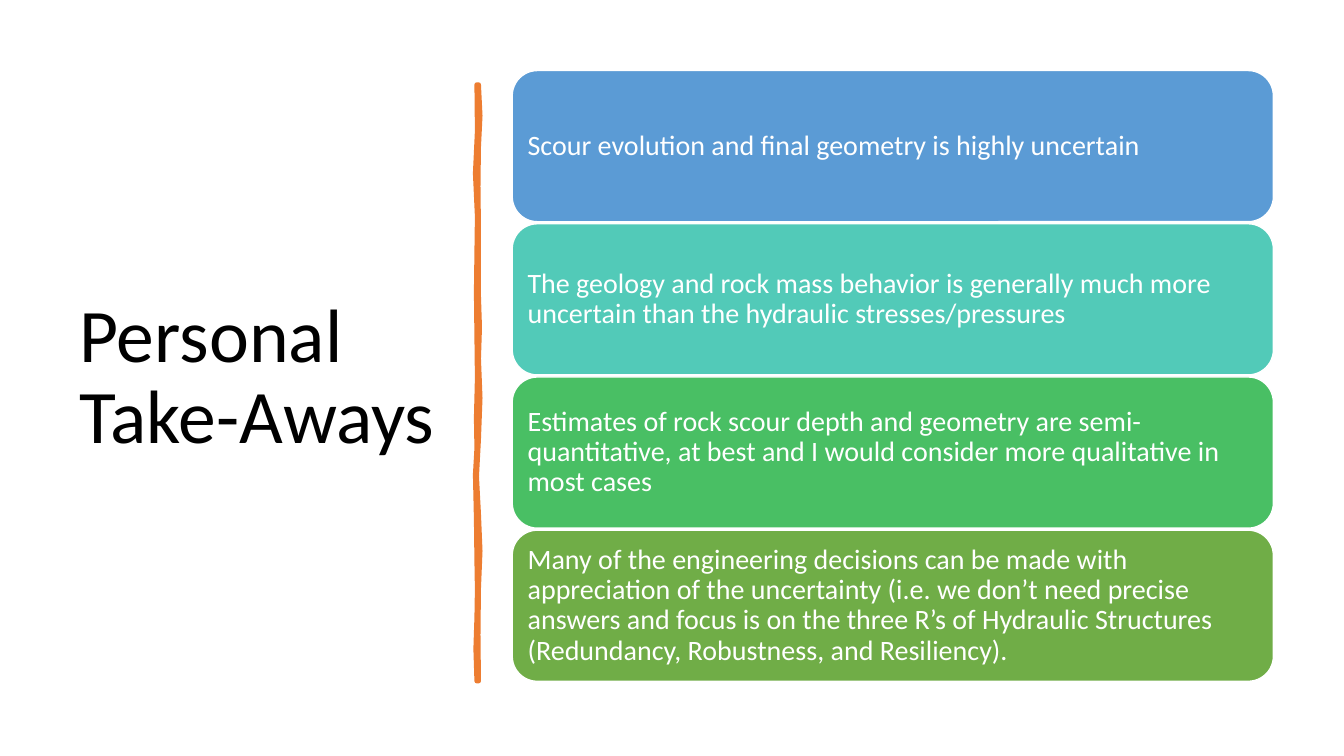
import pptx
import pptx.util
import pptx.dml.color
import pptx.enum.shapes
import pptx.enum.text

Inches = pptx.util.Inches
Pt = pptx.util.Pt

POINTS = (
    ("5B9BD5", "Scour evolution and final geometry is highly uncertain"),
    ("52CAB8", "The geology and rock mass behavior is generally much more "
               "uncertain than the hydraulic stresses/pressures"),
    ("49BF64", "Estimates of rock scour depth and geometry are semi-quantitative, "
               "at best and I would consider more qualitative in most cases"),
    ("70AD47", "Many of the engineering decisions can be made with appreciation of "
               "the uncertainty (i.e. we don’t need precise answers and focus is on "
               "the three R’s of Hydraulic Structures (Redundancy, Robustness, and "
               "Resiliency)."),
)
BRUSH = (
    (4750, 840), (4765, 1150), (4750, 1460), (4745, 1850), (4750, 2260),
    (4750, 2940), (4760, 3250), (4750, 3560), (4765, 3950), (4750, 4360),
    (4730, 4730), (4750, 5100), (4765, 5470), (4750, 5840), (4745, 6300),
    (4750, 6760), (4730, 6760), (4720, 6440), (4730, 6130), (4735, 5850),
    (4730, 5570), (4725, 5150), (4715, 4710), (4730, 4450), (4725, 4150),
    (4735, 3750), (4730, 3350), (4725, 2900), (4730, 2500), (4735, 2150),
    (4715, 1720), (4735, 1300), (4730, 840),
)


def color(code):
    """Return the color for a hex string."""
    return pptx.dml.color.RGBColor.from_string(code)


def write(shape, text, size, ink, inset=0.1, inset_y=0.05):
    """Write one left-aligned, vertically centered paragraph in a shape."""
    frame = shape.text_frame
    frame.word_wrap = True
    frame.vertical_anchor = pptx.enum.text.MSO_ANCHOR.MIDDLE
    frame.margin_left = frame.margin_right = Inches(inset)
    frame.margin_top = frame.margin_bottom = Inches(inset_y)
    para = frame.paragraphs[0]
    para.alignment = pptx.enum.text.PP_ALIGN.LEFT
    para.line_spacing = 0.9
    run = para.add_run()
    run.text = text
    run.font.name = "Calibri"
    run.font.size = Pt(size)
    run.font.color.rgb = color(ink)


def paint(shape, fill, line, width):
    """Set the fill and outline of a shape and drop its shadow."""
    shape.shadow.inherit = False
    shape.fill.solid()
    shape.fill.fore_color.rgb = color(fill)
    shape.line.color.rgb = color(line)
    shape.line.width = Pt(width)


def title(slide, text):
    """Add the slide title."""
    box = slide.shapes.add_textbox(Inches(0.69), Inches(0.7), Inches(3.74), Inches(6.11))
    write(box, text, 54, "000000")


def stroke(slide):
    """Add the uneven brush stroke beside the title."""
    build = slide.shapes.build_freeform(*BRUSH[0], scale=Inches(0.001))
    build.add_line_segments(BRUSH[1:], close=True)
    paint(build.convert_to_shape(), "ED7D31", "ED7D31", 3.25)


def card(slide, top, fill, text):
    """Add a rounded card with its text."""
    kind = pptx.enum.shapes.MSO_SHAPE.ROUNDED_RECTANGLE
    shape = slide.shapes.add_shape(kind, Inches(5.08), Inches(top), Inches(7.55), Inches(1.5))
    paint(shape, fill, "FFFFFF", 1)
    write(shape, text, 20, "FFFFFF", inset=0.08, inset_y=0.08)


def main():
    """Build and save the slide."""
    deck = pptx.Presentation()
    deck.slide_width = Inches(13.33)
    deck.slide_height = Inches(7.5)
    slide = deck.slides.add_slide(deck.slide_layouts[6])
    title(slide, "Personal Take-Aways")
    stroke(slide)
    for row, (fill, text) in enumerate(POINTS):
        card(slide, 0.7 + row * 1.52, fill, text)
    deck.save("out.pptx")


if __name__ == "__main__":
    main()
